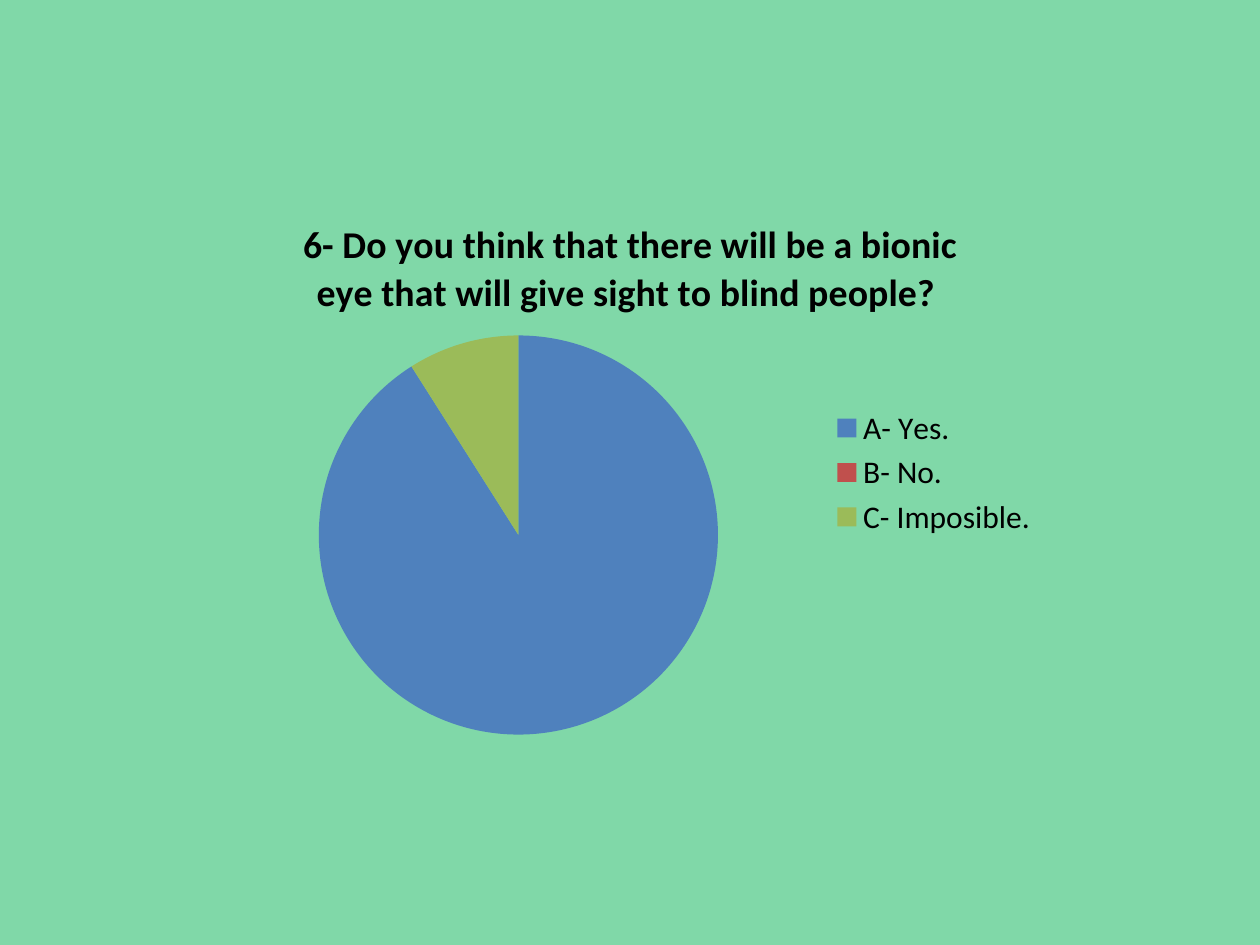
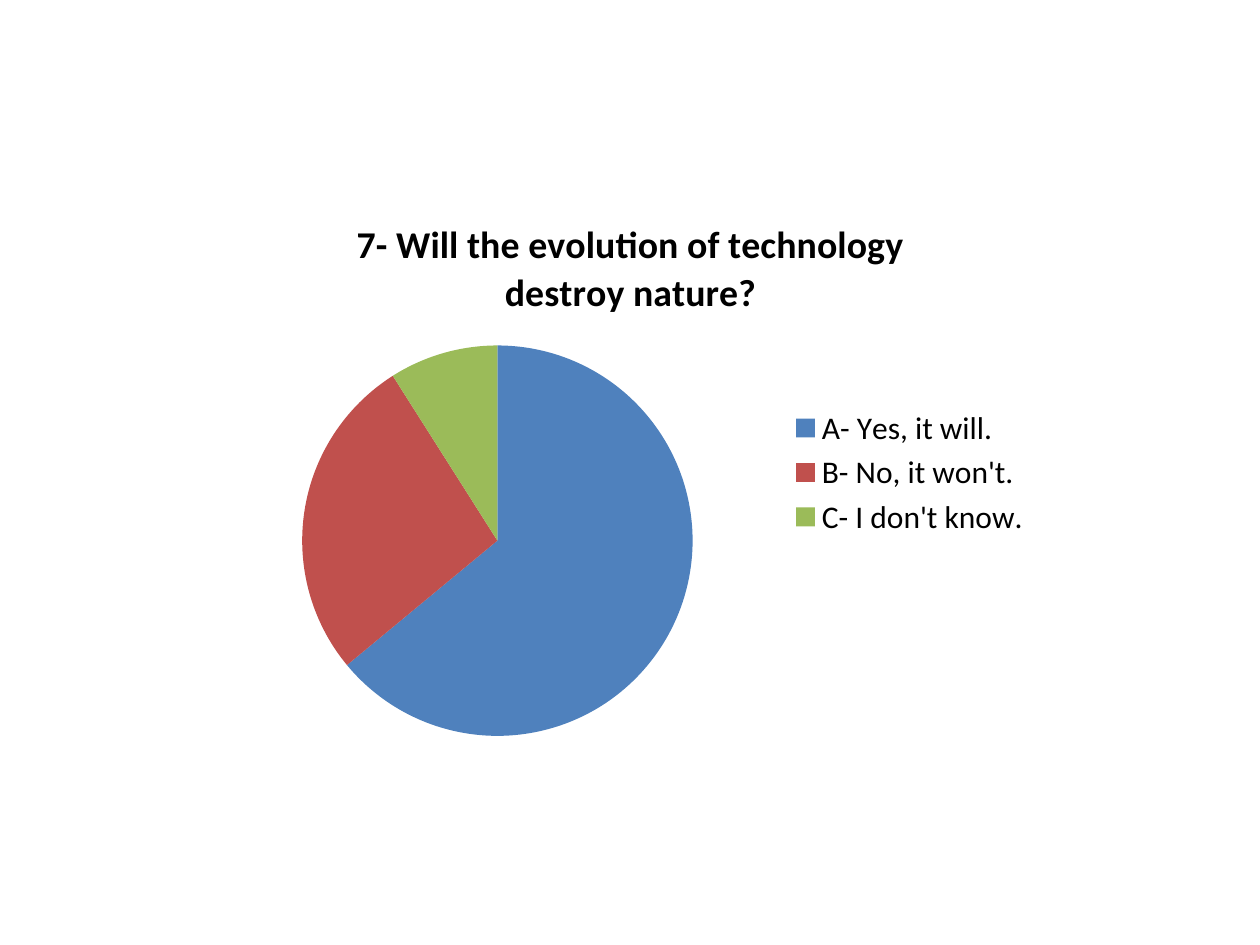
from pptx import Presentation
from pptx.chart.data import CategoryChartData
from pptx.dml.color import RGBColor
from pptx.enum import chart as ch
from pptx.oxml import parse_xml
from pptx.oxml.ns import nsdecls
from pptx.util import Inches, Pt

BLACK = RGBColor(0x00, 0x00, 0x00)
WHITE = RGBColor(0xFF, 0xFF, 0xFF)
MINT = RGBColor(0x80, 0xD8, 0xA8)
SLICES = [RGBColor(0x4F, 0x81, 0xBD), RGBColor(0xC0, 0x50, 0x4D),
          RGBColor(0x9B, 0xBB, 0x59)]
BODY = dict(name="Calibri", size=Pt(18))
HEAD = dict(name="Calibri", size=Pt(21.6), bold=True)
BOX = (1.67, 1.53, 6.67, 4.44)

# pie is left, top and diameter in inches inside the chart box
POLLS = [
    dict(ask="6- Do you think that there will be a bionic eye "
             "that will give sight to blind people? ",
         name="Series 1", back=MINT, pie=(0.86, 1.13, 3.17),
         votes={"A- Yes.": 91, "B- No.": 0, "C- Imposible.": 9}),
    dict(ask="7- Will the evolution of technology destroy nature?",
         name="7- Will the evolution of technology destroy nature?",
         back=WHITE, pie=(0.73, 1.21, 3.1),
         votes={"A- Yes, it will.": 64, "B- No, it won't.": 27,
                "C- I don't know. ": 9}),
]


def style(font, form):
    for key, value in form.items():
        setattr(font, key, value)
    font.color.rgb = BLACK


def place_pie(chart, box, pie):
    """Fix the pie's frame as shares of the chart box."""
    wide, high = box[2:]
    left, top, size = pie
    share = dict(x=left / wide, y=top / high, w=size / wide, h=size / high)
    vals = "".join(f'<c:{key} val="{val:.3f}"/>' for key, val in share.items())
    layout = parse_xml(
        f'<c:layout {nsdecls("c")}><c:manualLayout>'
        '<c:layoutTarget val="inner"/><c:xMode val="edge"/>'
        f'<c:yMode val="edge"/>{vals}</c:manualLayout></c:layout>')
    area = chart.plots[0]._element.getparent()
    for old in area.findall(layout.tag):
        area.remove(old)
    area.insert(0, layout)


def add_pie(slide, box, poll):
    data = CategoryChartData()
    data.categories = list(poll["votes"])
    data.add_series(poll["name"], list(poll["votes"].values()))
    chart = slide.shapes.add_chart(
        ch.XL_CHART_TYPE.PIE, *map(Inches, box), data).chart
    style(chart.font, BODY)

    # Question
    chart.has_title = True
    frame = chart.chart_title.text_frame
    frame.text = poll["ask"]
    style(frame.paragraphs[0].runs[0].font, HEAD)
    chart.chart_title.include_in_layout = False

    # Answers
    chart.has_legend = True
    chart.legend.position = ch.XL_LEGEND_POSITION.RIGHT
    chart.legend.include_in_layout = False
    style(chart.legend.font, BODY)

    # Slices
    plot = chart.plots[0]
    plot.vary_by_categories = True
    for i, color in enumerate(SLICES):
        fill = plot.series[0].points[i].format.fill
        fill.solid()
        fill.fore_color.rgb = color
    place_pie(chart, box, poll["pie"])


def add_poll(deck, poll):
    slide = deck.slides.add_slide(deck.slide_layouts[6])
    fill = slide.background.fill
    fill.solid()
    fill.fore_color.rgb = poll["back"]
    add_pie(slide, BOX, poll)


def main():
    deck = Presentation()
    deck.slide_width, deck.slide_height = Inches(10), Inches(7.5)
    for poll in POLLS:
        add_poll(deck, poll)
    deck.save("out.pptx")


if __name__ == "__main__":
    main()
